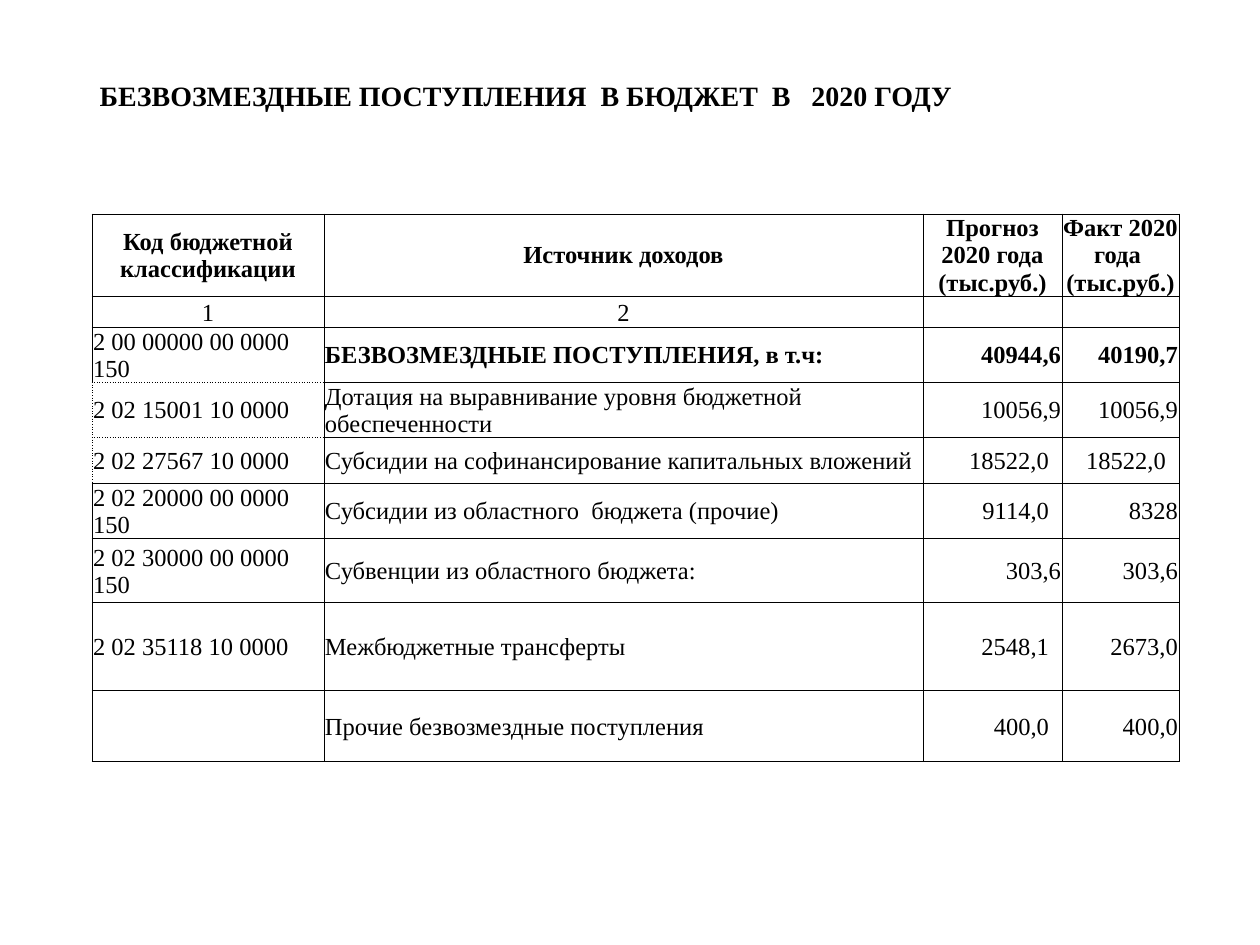
import pptx
import pptx.util
import pptx.dml.color
import pptx.enum.text
import pptx.oxml.ns
from lxml import etree

SCALE = 914400 / 126
FONT = "Times New Roman"
COLORS = {"ink": "000000", "paper": "FFFFFF"}
ALIGN = pptx.enum.text.PP_ALIGN
ANCHOR = pptx.enum.text.MSO_ANCHOR
COLUMN_WIDTHS = [232, 599, 139, 117]
ROW_HEIGHTS = [82, 30, 55, 55, 46, 55, 64, 88, 71]
ROWS = [
    ["Код бюджетной классификации", "Источник доходов", "Прогноз 2020 года (тыс.руб.)", "Факт 2020 года  (тыс.руб.)"],
    ["1", "2", "", ""],
    ["2 00 00000 00 0000 150", "БЕЗВОЗМЕЗДНЫЕ ПОСТУПЛЕНИЯ, в т.ч:", "40944,6", "40190,7"],
    ["2 02 15001 10 0000", "Дотация на выравнивание уровня бюджетной обеспеченности", "10056,9", "10056,9"],
    ["2 02 27567 10 0000", "Субсидии на софинансирование капитальных вложений", "18522,0", "18522,0"],
    ["2 02 20000 00 0000 150", "Субсидии из областного  бюджета (прочие)", "9114,0", "8328"],
    ["2 02 30000 00 0000 150", "Субвенции из областного бюджета:", "303,6", "303,6"],
    ["2 02 35118 10 0000", "Межбюджетные трансферты", "2548,1", "2673,0"],
    ["", "Прочие безвозмездные поступления", "400,0", "400,0"],
]
INDENTED_CELLS = {(4, 2), (4, 3), (5, 2), (7, 2), (8, 2)}
DOTTED_SIDES = {(2, 0): "B", (3, 0): "LTB", (4, 0): "LT"}


def px(length):
    return pptx.util.Emu(round(length * SCALE))


def format_runs(paragraph, size, bold):
    for run in paragraph.runs:
        run.font.name = FONT
        run.font.size = pptx.util.Pt(size)
        run.font.bold = bold
        run.font.color.rgb = pptx.dml.color.RGBColor.from_string(COLORS["ink"])


def add_title(slide, text):
    title = slide.shapes.title
    title.left, title.top, title.width, title.height = px(87), px(50), px(1086), px(95)
    title.text_frame.text = text
    title.text_frame.vertical_anchor = ANCHOR.MIDDLE
    paragraph = title.text_frame.paragraphs[0]
    paragraph.alignment = ALIGN.LEFT
    paragraph.line_spacing = 0.9
    format_runs(paragraph, 16, True)


def set_borders(cell, dotted):
    qn = pptx.oxml.ns.qn
    properties = cell._tc.get_or_add_tcPr()
    for index, side in enumerate("LRTB"):
        line = etree.Element(qn(f"a:ln{side}"), w=str(pptx.util.Pt(0.5)))
        fill = etree.SubElement(line, qn("a:solidFill"))
        etree.SubElement(fill, qn("a:srgbClr"), val=COLORS["ink"])
        etree.SubElement(line, qn("a:prstDash"), val="sysDot" if side in dotted else "solid")
        properties.insert(index, line)


def fill_cell(cell, text, row, column):
    cell.fill.solid()
    cell.fill.fore_color.rgb = pptx.dml.color.RGBColor.from_string(COLORS["paper"])
    cell.margin_left = cell.margin_top = px(1)
    cell.margin_right = px(13 if (row, column) in INDENTED_CELLS else 1)
    cell.margin_bottom = 0
    cell.vertical_anchor = ANCHOR.BOTTOM if row == 1 else ANCHOR.MIDDLE
    cell.text_frame.text = text
    paragraph = cell.text_frame.paragraphs[0]
    if row < 2:
        paragraph.alignment = ALIGN.CENTER
    else:
        paragraph.alignment = ALIGN.RIGHT if column > 1 else ALIGN.LEFT
    format_runs(paragraph, 14, row == 0 or (row == 2 and column > 0))
    if not text:
        etree.SubElement(paragraph._p, pptx.oxml.ns.qn("a:endParaRPr"), sz="1400")
    set_borders(cell, DOTTED_SIDES.get((row, column), ""))


def add_income_table(slide):
    frame = slide.shapes.add_table(
        len(ROWS), len(COLUMN_WIDTHS), px(92), px(214), px(sum(COLUMN_WIDTHS)), px(sum(ROW_HEIGHTS)))
    table = frame.table
    table.first_row = table.horz_banding = False
    for column, width in zip(table.columns, COLUMN_WIDTHS):
        column.width = px(width)
    for row, height in zip(table.rows, ROW_HEIGHTS):
        row.height = px(height)
    for row, texts in enumerate(ROWS):
        for column, text in enumerate(texts):
            fill_cell(table.cell(row, column), text, row, column)


def main():
    presentation = pptx.Presentation()
    presentation.slide_width, presentation.slide_height = px(1260), px(945)
    slide = presentation.slides.add_slide(presentation.slide_layouts[5])
    add_title(slide, "БЕЗВОЗМЕЗДНЫЕ ПОСТУПЛЕНИЯ  В БЮДЖЕТ  В   2020 ГОДУ")
    add_income_table(slide)
    presentation.save("out.pptx")


if __name__ == "__main__":
    main()
